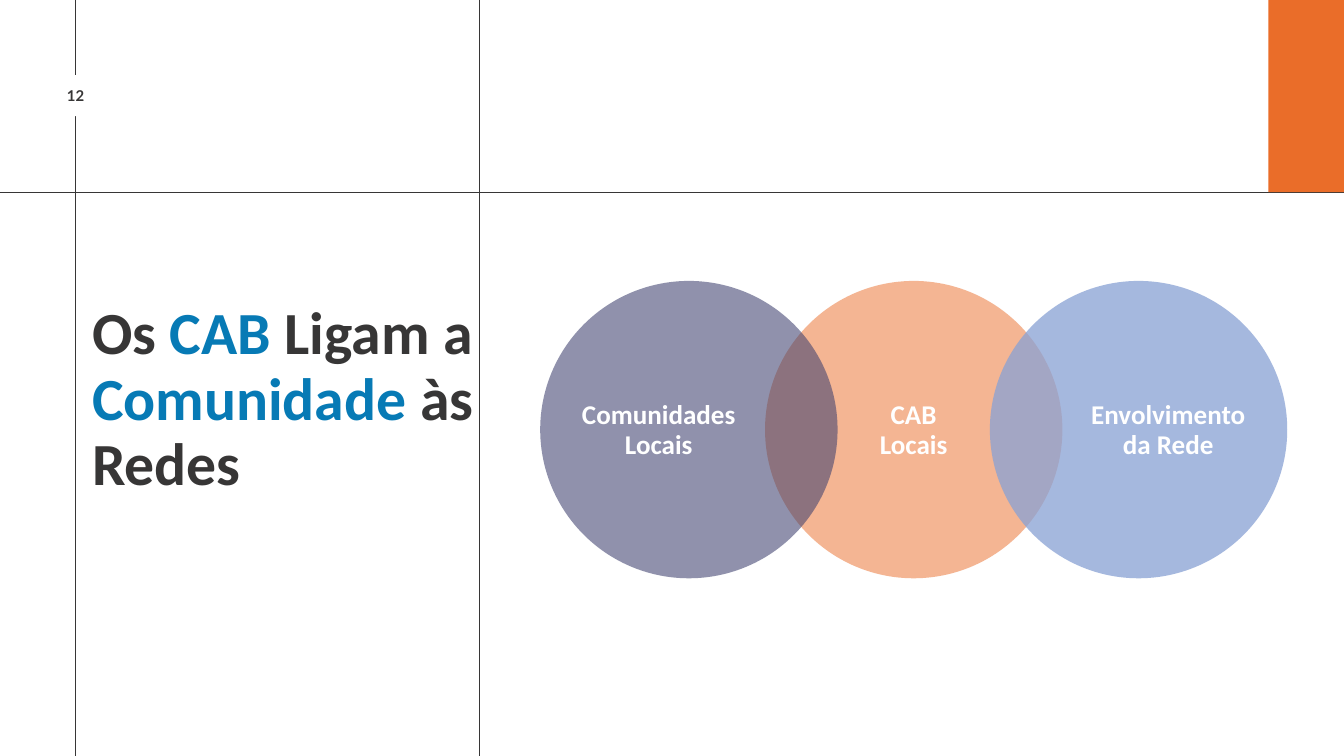
from lxml import etree
from pptx import Presentation
from pptx import util as u
from pptx.dml.color import RGBColor
from pptx.enum import shapes, text
from pptx.oxml.ns import qn

Pt = u.Pt
WIDTH, HEIGHT = 1440, 810
COLORS = {
    "ink": "373636",
    "white": "FFFFFF",
    "orange": "EA6D29",
    "purple": "414370",
    "periwinkle": "8AA2D4",
    "blue": "077AB5",
}


def rgb(name):
    return RGBColor.from_string(COLORS[name])


def add_filled(slide, kind, box, color, alpha=100):
    """Add a borderless shape; alpha is its opacity in percent."""
    sp = slide.shapes.add_shape(kind, *map(Pt, box))
    sp.shadow.inherit = False
    sp.line.fill.background()
    sp.fill.solid()
    sp.fill.fore_color.rgb = rgb(color)
    if alpha < 100:
        clr = sp._element.spPr.find(qn("a:solidFill"))[0]
        etree.SubElement(clr, qn("a:alpha"), val=str(alpha * 1000))


def add_rule(slide, x1, y1, x2, y2):
    line = slide.shapes.add_connector(
        shapes.MSO_CONNECTOR.STRAIGHT, *map(Pt, (x1, y1, x2, y2)))
    line.line.width = Pt(0.75)
    line.line.color.rgb = rgb("ink")
    etree.SubElement(line._element.spPr, qn("a:effectLst"))


def write(sp, paragraphs, size, spacing, align, font="Calibri"):
    """Fill a text shape; each paragraph is a list of (words, color) runs."""
    tf = sp.text_frame
    tf.word_wrap = True
    tf.auto_size = text.MSO_AUTO_SIZE.NONE
    tf.vertical_anchor = text.MSO_ANCHOR.TOP
    tf.margin_left = tf.margin_right = tf.margin_top = tf.margin_bottom = 0
    for i, runs in enumerate(paragraphs):
        p = tf.add_paragraph() if i else tf.paragraphs[0]
        p.alignment = align
        p.line_spacing = Pt(spacing)
        p.space_before = Pt(0)
        for words, color in runs:
            r = p.add_run()
            r.text = words
            r.font.name = font
            r.font.size = Pt(size)
            r.font.bold = True
            r.font.color.rgb = rgb(color)


def add_label(slide, box, lines, color, size, spacing, font="Calibri"):
    sp = slide.shapes.add_textbox(*map(Pt, box))
    write(sp, [[(line, color)] for line in lines], size, spacing,
          text.PP_ALIGN.CENTER, font)


def add_title(slide, box, runs):
    sp = slide.shapes.title
    sp.left, sp.top, sp.width, sp.height = map(Pt, box)
    write(sp, [runs], 64, 70.4, text.PP_ALIGN.LEFT)


def add_frame(slide):
    """Draw the grid lines, page number and corner block."""
    rect = shapes.MSO_SHAPE.RECTANGLE
    add_rule(slide, 80.4, 0, 80.4, HEIGHT)
    add_filled(slide, rect, (49.7, 80.6, 62, 44), "white")
    add_label(slide, (54.7, 94.3, 52.6, 18), ["12"], "ink", 16, 17.6, "Lato")
    add_rule(slide, 0, 205.6, WIDTH, 205.6)
    add_rule(slide, 513.7, 0, 513.7, HEIGHT)
    add_filled(slide, rect, (1359, 0, WIDTH - 1359, 206), "orange")


def add_venn(slide):
    left, top, size, step = 578.8, 301, 318.6, 240.9
    # Back to front: position in the row, colour, opacity
    for column, color, alpha in ((1, "orange", 50), (0, "purple", 58),
                                 (2, "periwinkle", 76)):
        add_filled(slide, shapes.MSO_SHAPE.OVAL,
                   (left + column * step, top, size, size), color, alpha)
    for x, width, lines in ((602.6, 206.6, ["Comunidades Locais"]),
                            (884.2, 189.4, ["CAB", "Locais"]),
                            (1154.2, 195, ["Envolvimento", "da Rede"])):
        add_label(slide, (x, 429, width, 65), lines, "white", 29, 31.9)


def main():
    prs = Presentation()
    prs.slide_width, prs.slide_height = Pt(WIDTH), Pt(HEIGHT)
    slide = prs.slides.add_slide(prs.slide_layouts[5])
    add_frame(slide)
    add_title(slide, (98.6, 322, 412, 281), [
        ("Os ", "ink"), ("CAB ", "blue"), ("Ligam a ", "ink"),
        ("Comunidade ", "blue"), ("às Redes", "ink")])
    add_venn(slide)
    prs.save("out.pptx")


if __name__ == "__main__":
    main()
